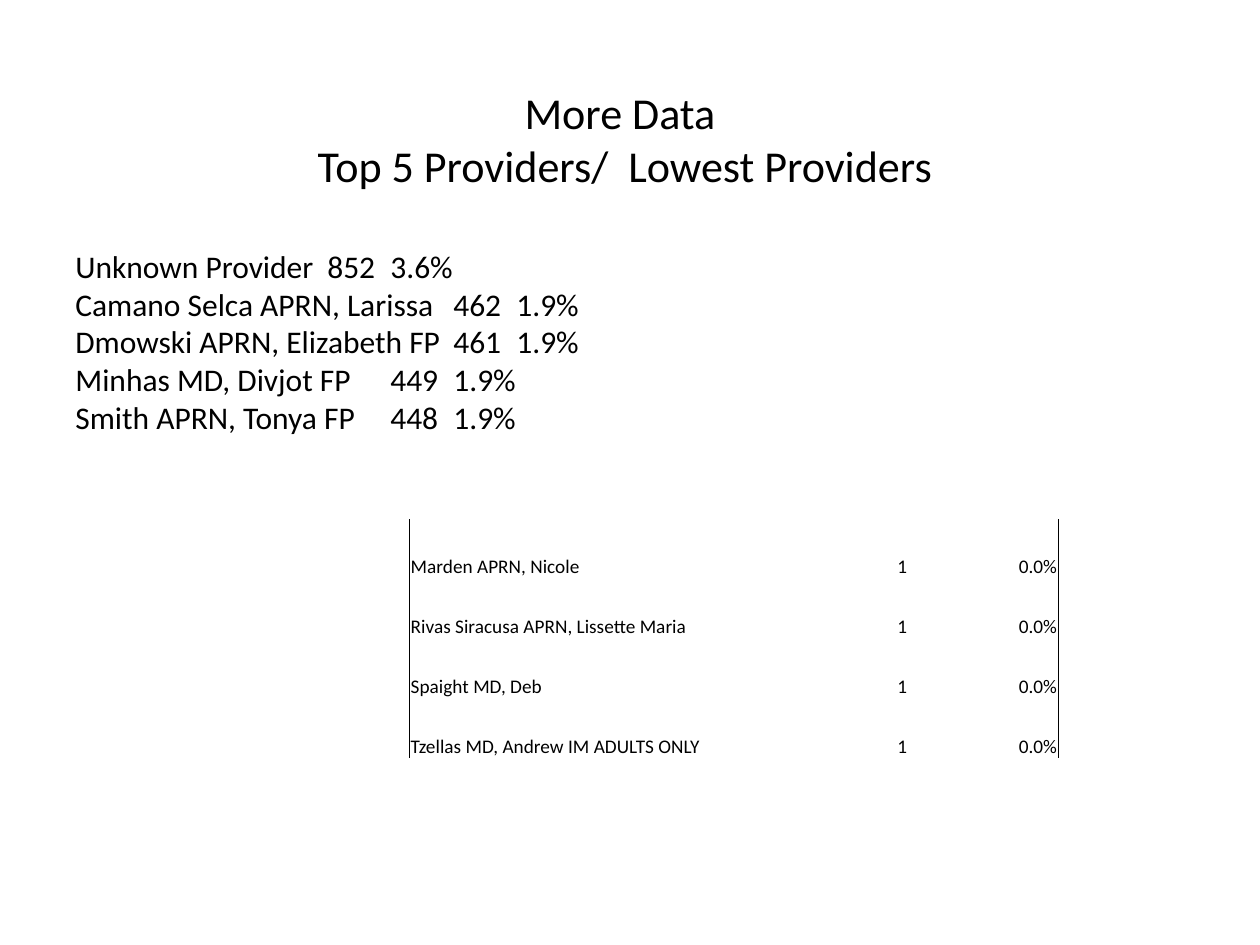
from lxml.etree import SubElement
from pptx import Presentation
from pptx.dml.color import RGBColor
from pptx.enum.text import MSO_ANCHOR as Anchor, MSO_AUTO_SIZE as AutoSize, PP_ALIGN as Align
from pptx.oxml import parse_xml
from pptx.oxml.ns import nsdecls, qn
from pptx.util import Inches, Pt

BLACK = RGBColor(0x00, 0x00, 0x00)
FONT = "Calibri"
TITLE_LINES = ["More Data  ", "Top 5 Providers/  Lowest Providers "]
TOP_PROVIDERS = [
    ("Unknown Provider", "852", "3.6%"),
    ("Camano Selca APRN, Larissa", "462", "1.9%"),
    ("Dmowski APRN, Elizabeth FP", "461", "1.9%"),
    ("Minhas MD, Divjot FP", "449", "1.9%"),
    ("Smith APRN, Tonya FP", "448", "1.9%"),
]
LOWEST_PROVIDERS = [
    ("Marden APRN, Nicole", "1", "0.0%"),
    ("Rivas Siracusa APRN, Lissette Maria", "1", "0.0%"),
    ("Spaight MD, Deb", "1", "0.0%"),
    ("Tzellas MD, Andrew IM ADULTS ONLY", "1", "0.0%"),
]
COLUMN_WIDTHS = [3.34, 0.62, 1.19]
ROW_HEIGHT = 0.475
TAB_STOPS = [2, 2.5, 3, 3.5]
PLAIN_TABLE_STYLE = "{2D5ABB26-0587-4C30-8999-92F81FD0307C}"


def add_run(paragraph, text, size):
    run = paragraph.add_run()
    run.text = text
    run.font.name = FONT
    run.font.size = Pt(size)
    run.font.color.rgb = BLACK


def set_tab_stops(paragraph):
    tab_list = SubElement(paragraph._p.get_or_add_pPr(), qn("a:tabLst"))
    for stop in TAB_STOPS:
        SubElement(tab_list, qn("a:tab"), pos=str(Inches(stop)), algn="l")


def set_border(cell, side):
    border = parse_xml(
        f'<a:{side} {nsdecls("a")} w="{Pt(1)}"><a:solidFill>'
        f'<a:srgbClr val="{BLACK}"/></a:solidFill></a:{side}>'
    )
    cell._tc.get_or_add_tcPr().insert(0, border)


def fill_title(slide):
    title = slide.shapes.title
    title.left, title.top = Inches(0.5), Inches(0.88)
    title.width, title.height = Inches(9), Inches(0.44)
    frame = title.text_frame
    frame.auto_size = AutoSize.NONE
    frame.vertical_anchor = Anchor.MIDDLE
    heading = frame.paragraphs[0]
    heading.alignment = Align.CENTER
    for index, line in enumerate(TITLE_LINES):
        if index:
            heading.add_line_break()
        add_run(heading, line, 25.2)


def add_top_providers(slide):
    listing = slide.shapes.add_textbox(Inches(0.5), Inches(1.91), Inches(5), Inches(1.62))
    frame = listing.text_frame
    frame.word_wrap = True
    frame.auto_size = AutoSize.SHAPE_TO_FIT_TEXT
    for index, provider in enumerate(TOP_PROVIDERS):
        entry = frame.add_paragraph() if index else frame.paragraphs[0]
        set_tab_stops(entry)
        add_run(entry, "\t".join(provider), 18)


def fill_cell(cell, text, alignment):
    cell.fill.background()
    cell.vertical_anchor = Anchor.BOTTOM
    cell.margin_left = cell.margin_right = cell.margin_top = Inches(0.01)
    cell.margin_bottom = 0
    paragraph = cell.text_frame.paragraphs[0]
    paragraph.alignment = alignment
    add_run(paragraph, text, 11)


def add_lowest_providers(slide):
    row_count, column_count = len(LOWEST_PROVIDERS), len(COLUMN_WIDTHS)
    table = slide.shapes.add_table(
        row_count, column_count, Inches(3.25), Inches(4.12),
        Inches(sum(COLUMN_WIDTHS)), Inches(ROW_HEIGHT * row_count),
    ).table
    table.first_row = table.horz_banding = False
    table._tbl.tblPr.find(qn("a:tableStyleId")).text = PLAIN_TABLE_STYLE
    for column, width in zip(table.columns, COLUMN_WIDTHS):
        column.width = Inches(width)
    for row, provider in zip(table.rows, LOWEST_PROVIDERS):
        row.height = Inches(ROW_HEIGHT)
        for index, (cell, text) in enumerate(zip(row.cells, provider)):
            fill_cell(cell, text, Align.RIGHT if index else Align.LEFT)
        set_border(row.cells[0], "lnL")
        set_border(row.cells[column_count - 1], "lnR")


def main():
    deck = Presentation()
    deck.slide_width, deck.slide_height = Inches(10), Inches(7.5)
    slide = deck.slides.add_slide(deck.slide_layouts[5])
    fill_title(slide)
    add_top_providers(slide)
    add_lowest_providers(slide)
    deck.save("out.pptx")


if __name__ == "__main__":
    main()
